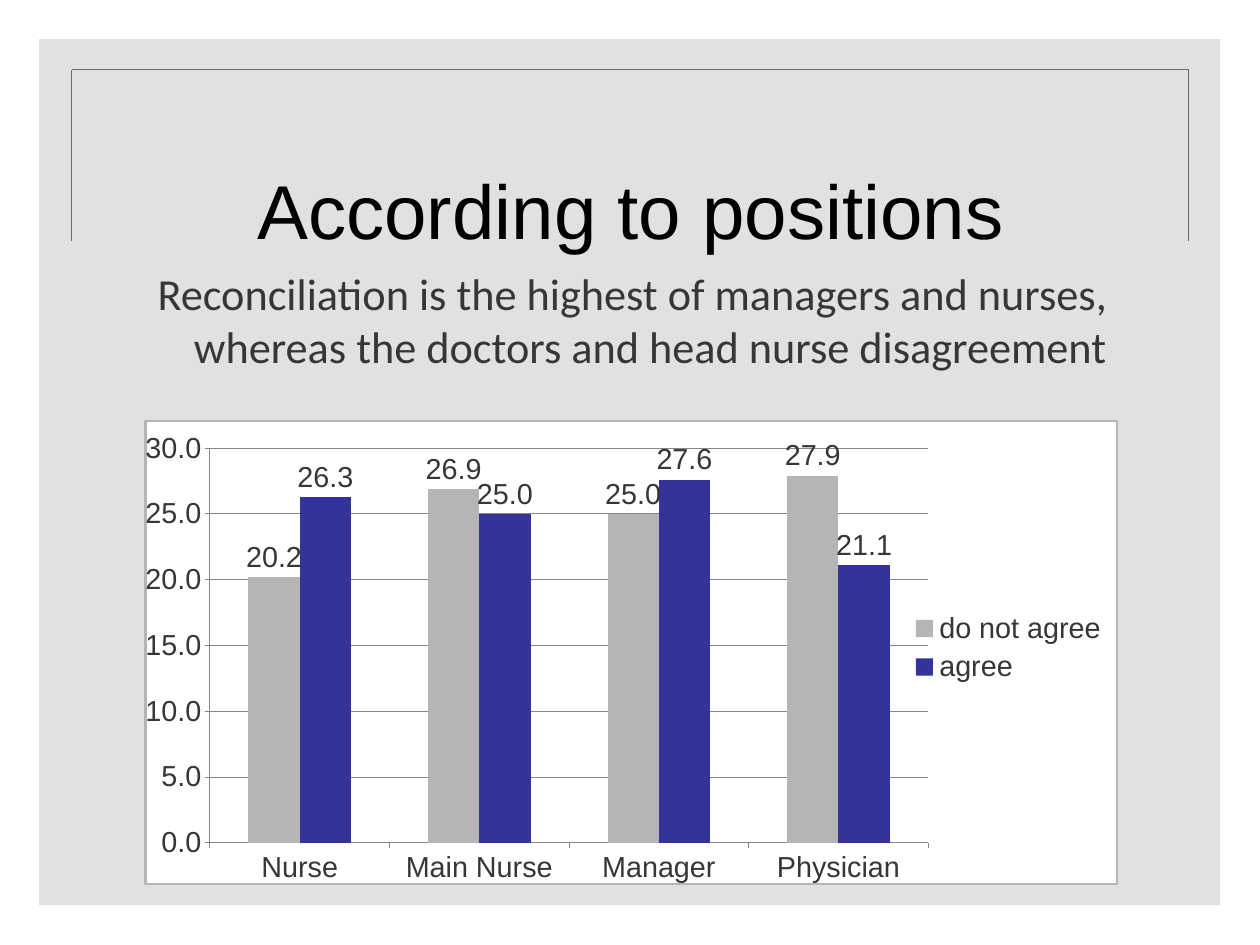
from lxml import etree
from pptx import Presentation
from pptx.chart.data import CategoryChartData
from pptx.dml.color import RGBColor
from pptx.enum.chart import XL_CHART_TYPE, XL_LABEL_POSITION, XL_LEGEND_POSITION, XL_TICK_MARK
from pptx.enum.shapes import MSO_CONNECTOR, MSO_SHAPE
from pptx.enum.text import MSO_ANCHOR, PP_ALIGN
from pptx.oxml import parse_xml
from pptx.oxml.ns import nsdecls, qn
from pptx.util import Cm, Pt

COLUMNS = XL_CHART_TYPE.COLUMN_CLUSTERED
OUTSIDE_END = XL_LABEL_POSITION.OUTSIDE_END
LEGEND_RIGHT = XL_LEGEND_POSITION.RIGHT
TICK_OUT = XL_TICK_MARK.OUTSIDE
TICK_NONE = XL_TICK_MARK.NONE
STRAIGHT = MSO_CONNECTOR.STRAIGHT
RECTANGLE = MSO_SHAPE.RECTANGLE
MIDDLE, TOP = MSO_ANCHOR.MIDDLE, MSO_ANCHOR.TOP
CENTER = PP_ALIGN.CENTER

BLACK = RGBColor(0x00, 0x00, 0x00)
WHITE = RGBColor(0xFF, 0xFF, 0xFF)
GREY = RGBColor(0xB5, 0xB5, 0xB7)
FRAME_GREY = RGBColor(0x6D, 0x6D, 0x6D)
AXIS_GREY = RGBColor(0x86, 0x86, 0x86)
TEXT_GREY = RGBColor(0x36, 0x36, 0x36)
BLUE = RGBColor(0x33, 0x33, 0x99)

POSITIONS = ["Nurse", "Main Nurse", "Manager", "Physician"]
ANSWERS = [
    ("do not agree", (20.2, 26.9, 25.0, 27.9), GREY),
    ("agree", (26.3, 25.0, 27.6, 21.1), BLUE),
]
PLOT_AREA = {"x": 0.065, "y": 0.06, "w": 0.74, "h": 0.85}
PLOT_AREA.update(x=0.04, w=0.76, h=0.87)


def add_rectangle(s, box, color):
    """Add a plain filled rectangle without outline."""
    sp = s.shapes.add_shape(RECTANGLE, *box)
    sp.shadow.inherit = False
    sp.fill.solid()
    sp.fill.fore_color.rgb = color
    sp.line.fill.background()
    return sp


def add_background(s, box):
    """Add the translucent panel and the open frame near its top."""
    panel = add_rectangle(s, box, GREY)
    color = panel.fill._xPr.find(qn("a:solidFill"))[0]
    etree.SubElement(color, qn("a:alpha"), val="40000")

    x, y, w, h = box
    left, right = x + Cm(0.94), x + w - Cm(0.9)
    top, bottom = y + Cm(0.88), y + Cm(5.79)
    corners = [(left, bottom), (left, top), (right, top), (right, bottom)]
    for start, end in zip(corners, corners[1:]):
        edge = s.shapes.add_connector(STRAIGHT, *start, *end)
        edge.line.color.rgb = FRAME_GREY
        edge.line.width = Pt(1)
        etree.SubElement(edge._element.spPr, qn("a:effectLst"))


def add_text(s, box, text, font, size, color, anchor):
    """Add a centred text box and return its frame and paragraph."""
    tf = s.shapes.add_textbox(*box).text_frame
    tf.word_wrap = True
    tf.vertical_anchor = anchor
    p = tf.paragraphs[0]
    p.alignment = CENTER
    r = p.add_run()
    r.text = text
    r.font.name = font
    r.font.size = Pt(size)
    r.font.color.rgb = color
    return tf, p


def add_title(s, box):
    """Add the slide title."""
    tf, p = add_text(s, box, "According to positions", "Arial", 62, BLACK, MIDDLE)
    tf.margin_left = tf.margin_right = tf.margin_top = tf.margin_bottom = 0
    p.line_spacing = 1.2


def add_finding(s, box):
    """Add the finding with a hanging indent."""
    text = ("Reconciliation is the highest of managers and nurses, "
            "whereas the doctors and head nurse disagreement")
    _, p = add_text(s, box, text, "Calibri", 36, TEXT_GREY, TOP)
    pPr = p._p.get_or_add_pPr()
    pPr.set("marL", str(Cm(1.02)))
    pPr.set("indent", str(-Cm(1.02)))


def set_plot_area(chart):
    """Fix the inner plot area as fractions of the chart."""
    plot_area = chart._chartSpace.chart.plotArea
    for old in plot_area.findall(qn("c:layout")):
        plot_area.remove(old)
    modes = '<c:xMode val="edge"/><c:yMode val="edge"/>'
    sizes = "".join(f'<c:{key} val="{value}"/>' for key, value in PLOT_AREA.items())
    plot_area.insert(0, parse_xml(
        f'<c:layout {nsdecls("c")}><c:manualLayout><c:layoutTarget val="inner"/>'
        f'{modes}{sizes}</c:manualLayout></c:layout>'))


def add_answers_chart(s, box):
    """Add the white card and the column chart of answers by position."""
    card = add_rectangle(s, box, WHITE)
    card.line.color.rgb = GREY
    card.line.width = Pt(2)

    data = CategoryChartData(number_format="0.0")
    data.categories = POSITIONS
    for name, values, _ in ANSWERS:
        data.add_series(name, values)
    chart = s.shapes.add_chart(COLUMNS, *box, data).chart
    chart.has_title = False
    chart.font.name = "Arial"
    chart.font.size = Pt(24)
    chart.font.color.rgb = TEXT_GREY
    chart.has_legend = True
    chart.legend.position = LEGEND_RIGHT
    chart.legend.include_in_layout = False
    set_plot_area(chart)

    values_axis = chart.value_axis
    values_axis.minimum_scale, values_axis.maximum_scale = 0, 30
    values_axis.major_unit = 5
    values_axis.tick_labels.number_format = "0.0"
    values_axis.tick_labels.number_format_is_linked = False
    values_axis.has_major_gridlines = True
    lines = [values_axis.major_gridlines.format.line]
    for axis in (values_axis, chart.category_axis):
        axis.major_tick_mark = TICK_OUT
        axis.minor_tick_mark = TICK_NONE
        lines.append(axis.format.line)
    for line in lines:
        line.color.rgb = AXIS_GREY
        line.width = Pt(0.75)

    plot = chart.plots[0]
    plot.vary_by_categories = False
    plot.gap_width = 150
    plot.overlap = 0
    for series, (_, _, color) in zip(plot.series, ANSWERS):
        series.format.fill.solid()
        series.format.fill.fore_color.rgb = color
        series.invert_if_negative = False
        labels = series.data_labels
        labels.show_value = True
        labels.number_format = "0.0"
        labels.number_format_is_linked = False
        labels.position = OUTSIDE_END


def main():
    """Build the slide and save it."""
    prs = Presentation()
    prs.slide_width, prs.slide_height = Cm(36.12), Cm(27.1)
    s = prs.slides.add_slide(prs.slide_layouts[6])
    add_background(s, (Cm(1.12), Cm(1.12), Cm(33.86), Cm(24.84)))
    add_title(s, (Cm(2.92), Cm(3.6), Cm(30.33), Cm(4.29)))
    add_finding(s, (Cm(2.11), Cm(7.5), Cm(32.05), Cm(4.11)))
    add_answers_chart(s, (Cm(4.17), Cm(12.07), Cm(27.86), Cm(13.28)))
    prs.save("out.pptx")


if __name__ == "__main__":
    main()
